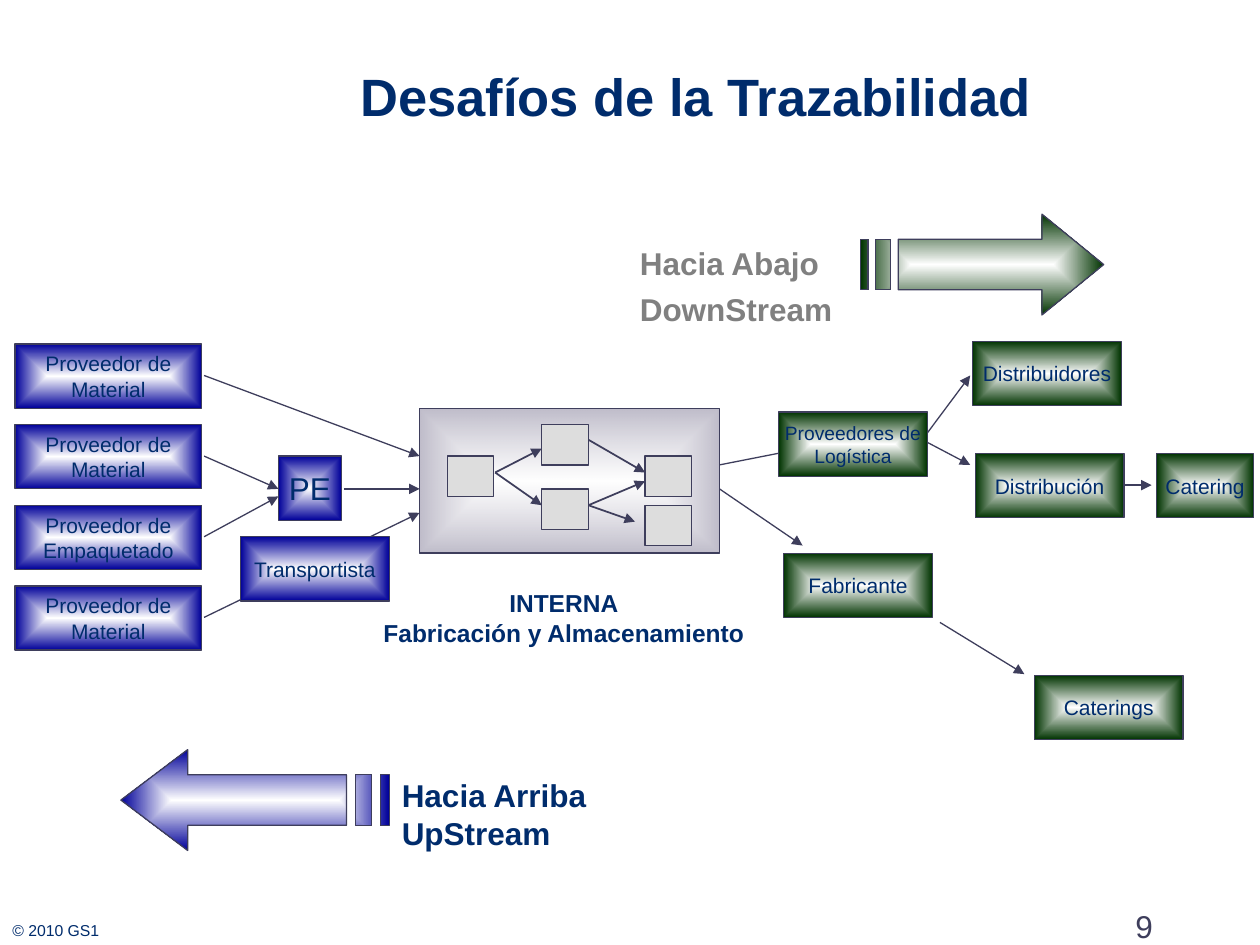
from pptx import Presentation
from pptx.dml.color import RGBColor as Rgb
from pptx.enum.shapes import MSO_CONNECTOR as Conn, MSO_SHAPE as Geo
from pptx.enum.text import MSO_ANCHOR as Anchor, PP_ALIGN as Align
from pptx.oxml import parse_xml
from pptx.oxml.ns import nsdecls, qn
from pptx.util import Inches, Pt

INK = {"navy": "002C6C", "slate": "3E3E5C", "gray": "808080", "pale": "DDDDDD",
       "white": "FFFFFF", "blue": "000099", "green": "003300", "mauve": "60597B"}


def write(frame, text, size=12, ink="navy", bold=False, align=Align.CENTER,
          anchor=Anchor.TOP, wrap=False, gap=0):
    frame.word_wrap = wrap
    frame.vertical_anchor = anchor
    for i, line in enumerate(text.split("\n")):
        para = frame.paragraphs[0] if i == 0 else frame.add_paragraph()
        para.alignment = align
        if i and gap:
            para.space_before = Pt(gap)
        run = para.add_run()
        run.text = line
        run.font.name = "Arial"
        run.font.size = Pt(size)
        run.font.bold = bold
        run.font.color.rgb = Rgb.from_string(INK[ink])


class Deck:
    def __init__(self):
        self.prs = Presentation()
        self.prs.slide_width = Inches(10)
        self.prs.slide_height = Inches(7.5)
        self.slide = self.prs.slides.add_slide(self.prs.slide_layouts[5])
        self.shapes = self.slide.shapes

    def title(self, text, *at):
        head = self.shapes.title
        head.left, head.top, head.width, head.height = map(Inches, at)
        write(head.text_frame, text, size=30, bold=True, align=Align.LEFT,
              anchor=Anchor.MIDDLE, wrap=True)

    def label(self, text, *at, **form):
        box = self.shapes.add_textbox(*map(Inches, at))
        write(box.text_frame, text, **form)

    def edge(self, shape):
        shape.shadow.inherit = False
        shape.line.color.rgb = Rgb.from_string(INK["slate"])
        shape.line.width = Pt(0.75)

    def glow(self, shape, ink, path="shape", alphas=(100, 100)):
        shape.fill.gradient()
        grad = shape._element.spPr.find(qn("a:gradFill"))
        for child in list(grad):
            grad.remove(child)
        stops = "".join(
            f'<a:gs pos="{pos}"><a:srgbClr val="{INK[name]}">'
            f'<a:alpha val="{alpha * 1000}"/></a:srgbClr></a:gs>'
            for pos, name, alpha in zip((0, 100000), ("white", ink), alphas))
        grad.append(parse_xml(f'<a:gsLst {nsdecls("a")}>{stops}</a:gsLst>'))
        grad.append(parse_xml(
            f'<a:path {nsdecls("a")} path="{path}">'
            '<a:fillToRect l="50000" t="50000" r="50000" b="50000"/></a:path>'))

    def rect(self, *at):
        shape = self.shapes.add_shape(Geo.RECTANGLE, *map(Inches, at))
        self.edge(shape)
        return shape

    def panel(self, *at):
        self.glow(self.rect(*at), "mauve", alphas=(32, 40))

    def step(self, x, y):
        shape = self.rect(x, y, 0.37, 0.32)
        shape.fill.solid()
        shape.fill.fore_color.rgb = Rgb.from_string(INK["pale"])

    def node(self, text, x, y, wide, ink, size=12):
        shape = self.rect(x, y, wide, 0.51)
        self.glow(shape, ink)
        write(shape.text_frame, text, size=size, anchor=Anchor.MIDDLE)

    def link(self, *ends, width=0.75):
        line = self.shapes.add_connector(Conn.STRAIGHT, *map(Inches, ends))
        line.line.color.rgb = Rgb.from_string(INK["slate"])
        line.line.width = Pt(width)
        line.line._get_or_add_ln().append(
            parse_xml(f'<a:tailEnd {nsdecls("a")} type="triangle"/>'))
        line._element.spPr.append(parse_xml(f'<a:effectLst {nsdecls("a")}/>'))

    def arrow(self, mid, tip, neck, tail, bars, ink):
        top, low = mid - 0.2, mid + 0.2
        rings = [[(neck, mid - 0.4), (neck, top), (tail, top), (tail, low),
                  (neck, low), (neck, mid + 0.4), (tip, mid)]]
        rings += [[(a, top), (a, low), (b, low), (b, top)] for a, b in bars]
        pen = None
        for ring in rings:
            first, *rest = [(Inches(x), Inches(y)) for x, y in ring]
            if pen is None:
                pen = self.shapes.build_freeform(*first)
            else:
                pen.move_to(*first)
            pen.add_line_segments(rest, close=True)
        shape = pen.convert_to_shape()
        self.edge(shape)
        self.glow(shape, ink, path="rect")


LINKS = [
    (1.62, 4.9, 3.33, 4.07), (1.62, 2.98, 3.33, 3.62), (1.62, 4.26, 2.21, 3.94),
    (1.62, 3.62, 2.21, 3.88), (2.73, 3.88, 3.33, 3.88), (5.71, 3.88, 6.37, 4.33),
    (5.71, 3.69, 6.37, 3.56), (7.32, 3.49, 7.7, 2.98), (7.32, 3.49, 7.7, 3.69),
    (8.92, 3.85, 9.14, 3.85), (7.46, 4.94, 8.13, 5.35)]
STEPS = [(3.55, 3.62), (4.3, 3.37), (4.3, 3.88), (5.12, 3.62), (5.12, 4.01)]
FLOWS = [
    (3.93, 3.75, 4.3, 3.56), (3.93, 3.75, 4.3, 4.01), (4.67, 3.49, 5.12, 3.75),
    (4.67, 4.01, 5.12, 3.82), (4.67, 4.01, 5.04, 4.14)]
GOODS = ["Material", "Material", "Empaquetado", "Material"]
BUYERS = [
    ("Distribuidores", 7.72, 2.71, 1.18), ("Distribución", 7.74, 3.6, 1.18),
    ("Fabricante", 6.22, 4.39, 1.18), ("Caterings", 8.21, 5.36, 1.18),
    ("Catering", 9.18, 3.6, 0.77)]


def main():
    deck = Deck()
    deck.title("Desafíos de la Trazabilidad", 2.76, 0.34, 6.62, 0.83)
    deck.label("© 2010 GS1", 0, 7.26, 2.43, 0.25, size=9, align=Align.LEFT, wrap=True)
    deck.label("9", 8.58, 7.15, 1, 0.35, size=18, ink="slate", wrap=True)

    for ends in LINKS:
        deck.link(*ends)
    deck.panel(3.33, 3.24, 2.38, 1.15)
    for spot in STEPS:
        deck.step(*spot)
    for ends in FLOWS:
        deck.link(*ends, width=1)
    deck.label("INTERNA\nFabricación y Almacenamiento", 2.87, 4.62, 3.21, 0.57,
               size=14, bold=True, wrap=True)

    for i, good in enumerate(GOODS):
        deck.node(f"Proveedor de\n{good}", 0.12, 2.73 + 0.64 * i, 1.48, "blue")
    deck.node("PE", 2.21, 3.62, 0.5, "blue", size=18)
    deck.node("Transportista", 1.91, 4.26, 1.18, "blue")
    for buyer in BUYERS:
        deck.node(*buyer, "green")
    deck.node("Proveedores de\nLogística", 6.18, 3.27, 1.18, "green", size=11)

    deck.arrow(2.1, 8.76, 8.27, 7.13, [(6.95, 7.07), (6.83, 6.89)], "green")
    deck.label("Hacia Abajo\nDownStream", 4.98, 1.89, 1.74, 0.71, size=18,
               ink="gray", bold=True, align=Align.LEFT, gap=4.3)
    deck.arrow(6.35, 0.96, 1.49, 2.75, [(2.82, 2.95), (3.02, 3.09)], "blue")
    deck.label("Hacia Arriba\nUpStream", 3.09, 6.11, 1.68, 0.71, size=18,
               bold=True, align=Align.LEFT)
    deck.prs.save("out.pptx")


if __name__ == "__main__":
    main()
